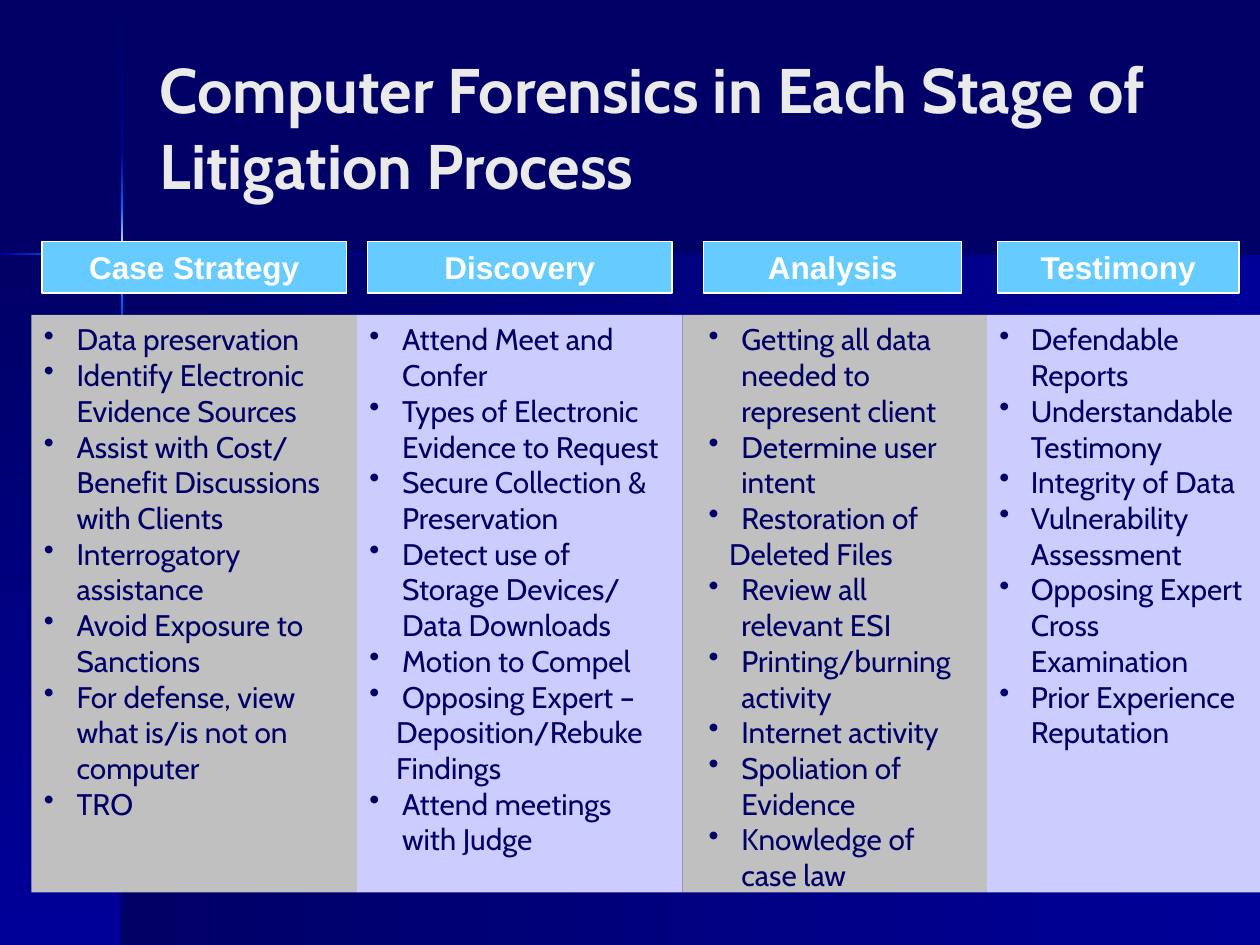
from copy import deepcopy

from pptx import Presentation
from pptx import util as u
from pptx.dml import color
from pptx.enum import shapes, text
from pptx.oxml import ns, xmlchemy

NAVY, BLUE, GLOW, CREAM = "000066", "000099", "0066FF", "FFFFCC"
GRAY, LAVENDER, SKY, WHITE = "C0C0C0", "CCCCFF", "66CCFF", "FFFFFF"
ACROSS, DOWN = 0, 270

BACKDROP = [
    (70, 145.5, 650, 394.5, ACROSS, [NAVY, BLUE]),
    (0, 145.5, 70, 394.5, DOWN, [NAVY, BLUE]),
    (69, 1, 1.5, 86, DOWN, [NAVY, BLUE]),
    (69, 203, 1.5, 337, DOWN, [BLUE, NAVY]),
    (127.5, 144.5, 592.5, 1.5, ACROSS, [BLUE, NAVY]),
    (69, 171, 1.5, 32, DOWN, [GLOW, BLUE]),
    (69, 87, 1.5, 32, DOWN, [BLUE, GLOW]),
    (69, 119, 1.5, 52, DOWN, [GLOW, CREAM, GLOW]),
    (0, 144.5, 44, 1.5, ACROSS, [BLUE, GLOW]),
]

STAGES = [
    {"name": "Case Strategy", "width": 186, "header": (24, 174), "fill": GRAY,
     "margin": 18.7, "hanging": 18.7, "plain_margin": 0, "plain": (),
     "items": ["Data preservation", "Identify Electronic Evidence Sources",
               "Assist with Cost/ Benefit Discussions with Clients",
               "Interrogatory assistance", "Avoid Exposure to Sanctions",
               "For defense, view what is/is not on computer", "TRO"]},
    {"name": "Discovery", "width": 186, "header": (210, 174), "fill": LAVENDER,
     "margin": 18.7, "hanging": 18.7, "plain_margin": 15.3,
     "plain": ("Deposition/Rebuke", "Findings"),
     "items": ["Attend Meet and Confer", "Types of Electronic Evidence to Request",
               "Secure Collection & Preservation",
               "Detect use of Storage Devices/ Data Downloads",
               "Motion to Compel", "Opposing Expert –", "Deposition/Rebuke",
               "Findings", "Attend meetings with Judge"]},
    {"name": "Analysis", "width": 174, "header": (402, 147.6), "fill": GRAY,
     "margin": 26.6, "hanging": 18.7, "plain_margin": 19.6,
     "plain": ("Deleted Files",),
     "items": ["Getting all data needed to represent client", "Determine user intent",
               "Restoration of", "Deleted Files", "Review all relevant ESI",
               "Printing/burning activity", "Internet activity",
               "Spoliation of Evidence", "Knowledge of case law"]},
    {"name": "Testimony", "width": 156, "header": (570, 138), "fill": LAVENDER,
     "margin": 18, "hanging": 18, "plain_margin": 0, "plain": (),
     "items": ["Defendable Reports", "Understandable Testimony", "Integrity of Data",
               "Vulnerability Assessment", "Opposing Expert Cross Examination",
               "Prior Experience Reputation"]},
]


def rgb(value):
    return color.RGBColor.from_string(value)


def add_rectangle(slide, left, top, width, height, fill=None):
    shape = slide.shapes.add_shape(
        shapes.MSO_SHAPE.RECTANGLE, u.Pt(left), u.Pt(top), u.Pt(width), u.Pt(height))
    shape.shadow.inherit = False
    shape.line.fill.background()
    if fill:
        shape.fill.solid()
        shape.fill.fore_color.rgb = rgb(fill)
    return shape


def add_run(paragraph, wording, font, size, ink, bold=False):
    run = paragraph.add_run()
    run.text = wording
    run.font.name = font
    run.font.size = u.Pt(size)
    run.font.bold = bold
    run.font.color.rgb = rgb(ink)


def add_gradient(slide, left, top, width, height, angle, colors):
    shape = add_rectangle(slide, left, top, width, height)
    shape.fill.gradient()
    shape.fill.gradient_angle = angle
    stop_list = shape._element.spPr.find(".//" + ns.qn("a:gsLst"))
    for _ in colors[2:]:
        stop_list.append(deepcopy(stop_list[0]))
    for index, (stop, value) in enumerate(zip(shape.fill.gradient_stops, colors)):
        stop.position = index / (len(colors) - 1)
        stop.color.rgb = rgb(value)


def set_title(slide, wording):
    title = slide.shapes.title
    title.left, title.top, title.width, title.height = (
        u.Pt(84), u.Pt(24), u.Pt(594), u.Pt(96))
    frame = title.text_frame
    frame.word_wrap = True
    frame.auto_size = text.MSO_AUTO_SIZE.NONE
    frame.vertical_anchor = text.MSO_ANCHOR.MIDDLE
    paragraph = frame.paragraphs[0]
    paragraph.alignment = text.PP_ALIGN.LEFT
    add_run(paragraph, wording, "Cabin", 36, "EAEAEA", True)


def indent(paragraph, margin, hanging=0):
    properties = paragraph._p.get_or_add_pPr()
    properties.set("marL", str(u.Pt(margin)))
    properties.set("indent", str(-u.Pt(hanging)))
    if hanging:
        bullet = xmlchemy.OxmlElement("a:buChar")
        bullet.set("char", "•")
        properties.append(bullet)


def add_list(slide, left, stage):
    shape = add_rectangle(slide, left, 180, stage["width"], 330, stage["fill"])
    frame = shape.text_frame
    frame.word_wrap = True
    frame.vertical_anchor = text.MSO_ANCHOR.TOP
    for index, item in enumerate(stage["items"]):
        paragraph = frame.add_paragraph() if index else frame.paragraphs[0]
        paragraph.alignment = text.PP_ALIGN.LEFT
        if item in stage["plain"]:
            indent(paragraph, stage["plain_margin"])
        else:
            indent(paragraph, stage["margin"], stage["hanging"])
        add_run(paragraph, item, "Cabin", 17, NAVY)


def add_header(slide, stage):
    left, width = stage["header"]
    shape = add_rectangle(slide, left, 138, width, 29.5, SKY)
    shape.line.color.rgb = rgb(WHITE)
    shape.line.width = u.Pt(0.75)
    shape.text_frame.vertical_anchor = text.MSO_ANCHOR.MIDDLE
    paragraph = shape.text_frame.paragraphs[0]
    paragraph.alignment = text.PP_ALIGN.CENTER
    add_run(paragraph, stage["name"], "Arial", 18, WHITE, True)


def main():
    presentation = Presentation()
    presentation.slide_width = u.Pt(720)
    presentation.slide_height = u.Pt(540)
    slide = presentation.slides.add_slide(presentation.slide_layouts[5])
    slide.background.fill.solid()
    slide.background.fill.fore_color.rgb = rgb(NAVY)
    for band in BACKDROP:
        add_gradient(slide, *band)
    set_title(slide, "Computer Forensics in Each Stage of Litigation Process")
    left = 18
    for stage in STAGES:
        add_list(slide, left, stage)
        add_header(slide, stage)
        left += stage["width"]
    presentation.save("out.pptx")


if __name__ == "__main__":
    main()
